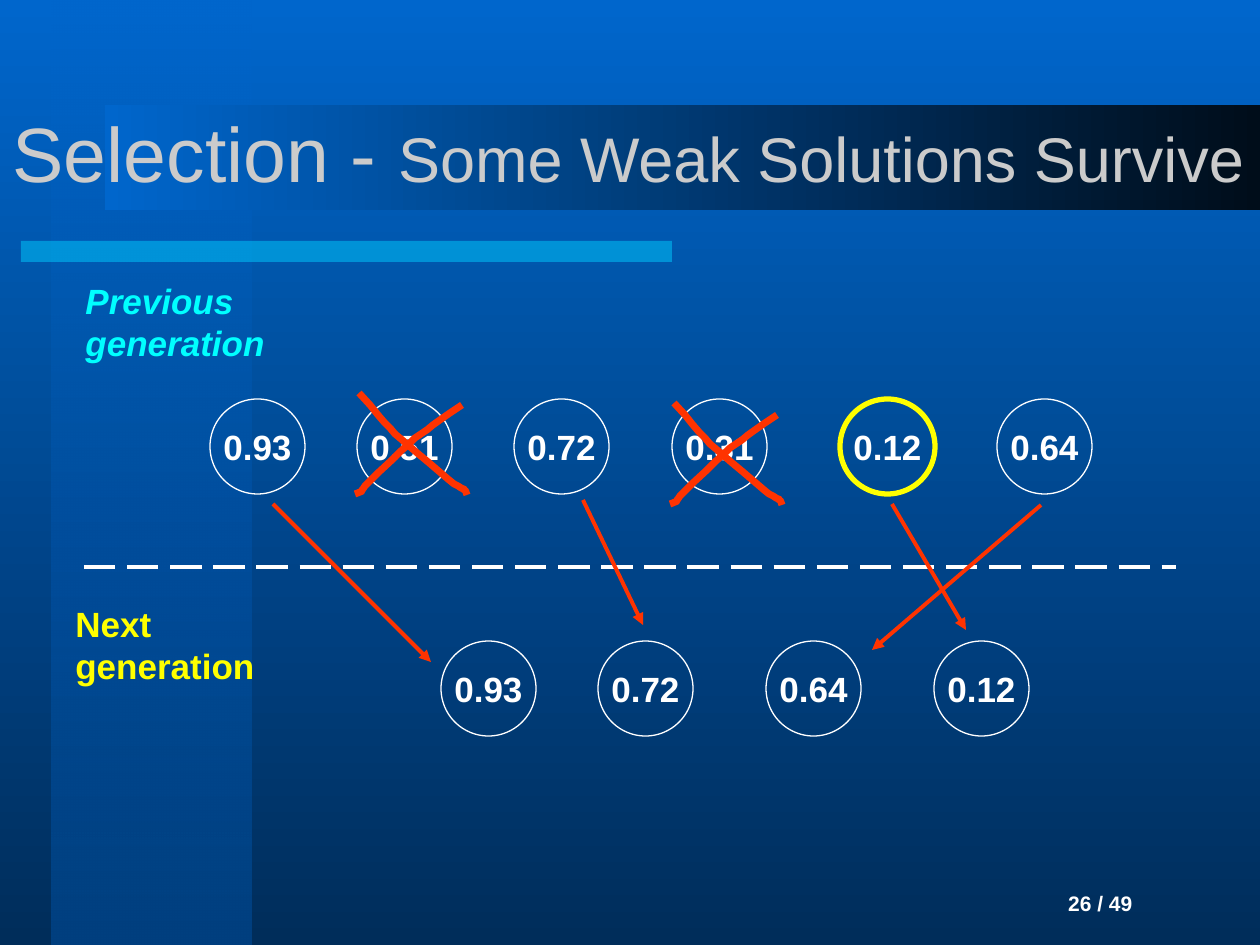
from dataclasses import dataclass

from lxml.etree import SubElement
from pptx import Presentation
from pptx.dml.color import RGBColor
from pptx.enum.dml import MSO_LINE
from pptx.enum.shapes import MSO_CONNECTOR, MSO_SHAPE
from pptx.enum.text import MSO_ANCHOR, MSO_AUTO_SIZE, PP_ALIGN
from pptx.oxml.ns import qn
from pptx.util import Pt

SCALE = 914400 / 126  # EMU per px


@dataclass(frozen=True)
class Theme:
    font: str = "Arial"
    blue: str = "0066CC"
    navy: str = "002D5A"
    panel: str = "004080"
    black: str = "000D1A"
    aqua: str = "00CCFF"
    white: str = "FFFFFF"
    title: str = "CBCBCB"
    cyan: str = "00FFFF"
    yellow: str = "FFFF00"
    red: str = "FF3300"
    title_size: int = 44
    subtitle_size: int = 36
    label_size: int = 20
    number_size: int = 12


def emu(*lengths):
    return [round(length * SCALE) for length in lengths]


def bezier(start, first, second, end, steps=10):
    """Points along a cubic curve, without its start."""
    for step in range(1, steps + 1):
        t = step / steps
        u = 1 - t
        yield tuple(
            u**3 * a + 3 * u * u * t * b + 3 * u * t * t * c + t**3 * d
            for a, b, c, d in zip(start, first, second, end)
        )


class SlideBuilder:
    def __init__(self, slide, theme):
        self.slide = slide
        self.theme = theme

    def gradient(self, fill, start, end, angle):
        fill.gradient()
        fill.gradient_angle = angle
        for stop, color, position in zip(fill.gradient_stops, (start, end), (0, 1)):
            stop.color.rgb = RGBColor.from_string(color)
            stop.position = position

    def rectangle(self, box, start, end=None, angle=0, alpha=None):
        shape = self.slide.shapes.add_shape(MSO_SHAPE.RECTANGLE, *emu(*box))
        shape.shadow.inherit = False
        shape.line.fill.background()
        if end:
            self.gradient(shape.fill, start, end, angle)
        else:
            shape.fill.solid()
            shape.fill.fore_color.rgb = RGBColor.from_string(start)
        if alpha:
            color = next(shape._element.spPr.iter(qn("a:srgbClr")))
            SubElement(color, qn("a:alpha"), val=str(alpha * 1000))

    def run(self, paragraph, text, size, color, bold=False, italic=False):
        run = paragraph.add_run()
        run.text = text
        font = run.font
        font.name, font.size = self.theme.font, Pt(size)
        font.bold, font.italic = bold, italic
        font.color.rgb = RGBColor.from_string(color)

    def title(self, box, runs):
        shape = self.slide.shapes.title
        shape.left, shape.top, shape.width, shape.height = emu(*box)
        frame = shape.text_frame
        frame.auto_size = MSO_AUTO_SIZE.NONE
        frame.vertical_anchor = MSO_ANCHOR.MIDDLE
        paragraph = frame.paragraphs[0]
        paragraph.alignment = PP_ALIGN.LEFT
        for text, size in runs:
            self.run(paragraph, text, size, self.theme.title)

    def label(self, box, text, size, color, italic=False,
              anchor=MSO_ANCHOR.TOP, right_inset=13):
        frame = self.slide.shapes.add_textbox(*emu(*box)).text_frame
        frame.word_wrap = True
        frame.vertical_anchor = anchor
        frame.margin_right = emu(right_inset)[0]
        self.run(frame.paragraphs[0], text, size, color, True, italic)

    def solution(self, left, top, fitness, color, width=0.75):
        shape = self.slide.shapes.add_shape(MSO_SHAPE.OVAL, *emu(left, top, 95, 95))
        shape.shadow.inherit = False
        shape.fill.background()
        self.stroke(shape.line, color, width)
        frame = shape.text_frame
        frame.word_wrap = False
        frame.vertical_anchor = MSO_ANCHOR.MIDDLE
        paragraph = frame.paragraphs[0]
        paragraph.alignment = PP_ALIGN.CENTER
        self.run(paragraph, fitness, self.theme.label_size, self.theme.white, True)

    def stroke(self, line, color, width):
        line.color.rgb = RGBColor.from_string(color)
        line.width = Pt(width)

    def line(self, ends, color, dash=None, arrow=False):
        connector = self.slide.shapes.add_connector(MSO_CONNECTOR.STRAIGHT, *emu(*ends))
        self.stroke(connector.line, color, 2.25)
        if dash:
            connector.line.dash_style = dash
        if arrow:
            SubElement(connector.line._get_or_add_ln(), qn("a:tailEnd"), type="triangle")
        SubElement(connector._element.spPr, qn("a:effectLst"))

    def curve(self, points, offset):
        points = [(x + offset[0], y + offset[1]) for x, y in points]
        builder = self.slide.shapes.build_freeform(*points[0], scale=SCALE)
        vertices = [*bezier(*points[:4]), *bezier(*points[3:])]
        builder.add_line_segments(vertices, close=False)
        shape = builder.convert_to_shape()
        shape.shadow.inherit = False
        shape.fill.background()
        self.stroke(shape.line, self.theme.red, 4)


def main():
    theme = Theme()
    presentation = Presentation()
    presentation.slide_width, presentation.slide_height = emu(1260, 945)
    slide = presentation.slides.add_slide(presentation.slide_layouts[5])
    builder = SlideBuilder(slide, theme)

    # Background and bands
    builder.gradient(slide.background.fill, theme.blue, theme.navy, 270)
    builder.rectangle((52, 0, 200, 945), theme.blue, theme.panel, 270, alpha=50)
    builder.rectangle((21, 241, 651, 21), theme.aqua, alpha=50)
    builder.rectangle((105, 105, 1155, 105), theme.blue, theme.black)

    # Title and page number; the title goes in front of the bands
    slide.shapes._spTree.append(slide.shapes.title._element)
    builder.title((0, 73, 1292, 158), [
        ("Selection - ", theme.title_size),
        ("Some Weak Solutions Survive", theme.subtitle_size),
    ])
    builder.label((1050, 872, 262, 63), " 26 / 49", theme.number_size, theme.white,
                  anchor=MSO_ANCHOR.MIDDLE)

    # Generations and the line between them
    builder.line((84, 567, 1176, 567), theme.white, dash=MSO_LINE.LONG_DASH)
    builder.label((73, 273, 362, 54), "Previous generation", theme.label_size,
                  theme.cyan, italic=True, right_inset=140)
    builder.label((63, 596, 290, 54), "Next generation", theme.label_size, theme.yellow)
    generations = {
        399: [(210, "0.93"), (357, "0.51"), (514, "0.72"), (672, "0.31"), (997, "0.64")],
        641: [(441, "0.93"), (598, "0.72"), (766, "0.64"), (934, "0.12")],
    }
    for top, solutions in generations.items():
        for left, fitness in solutions:
            builder.solution(left, top, fitness, theme.white)

    # Weak solution that survives
    builder.solution(840, 399, "0.12", theme.yellow, 3)

    # Survivors move to the next generation
    for ends in [(273, 504, 431, 662), (583, 500, 643, 625),
                 (1041, 505, 872, 650), (892, 504, 966, 630)]:
        builder.line(ends, theme.red, arrow=True)

    # Rejected solutions are crossed out
    cross = [
        [(777, 415), (731, 447), (742, 437), (693, 483), (669, 505), (683, 500), (670, 504)],
        [(674, 403), (714, 449), (703, 438), (757, 484), (784, 507), (777, 493), (782, 505)],
    ]
    for offset in [(0, 0), (-315, -10)]:
        for points in cross:
            builder.curve(points, offset)

    presentation.save("out.pptx")


if __name__ == "__main__":
    main()
